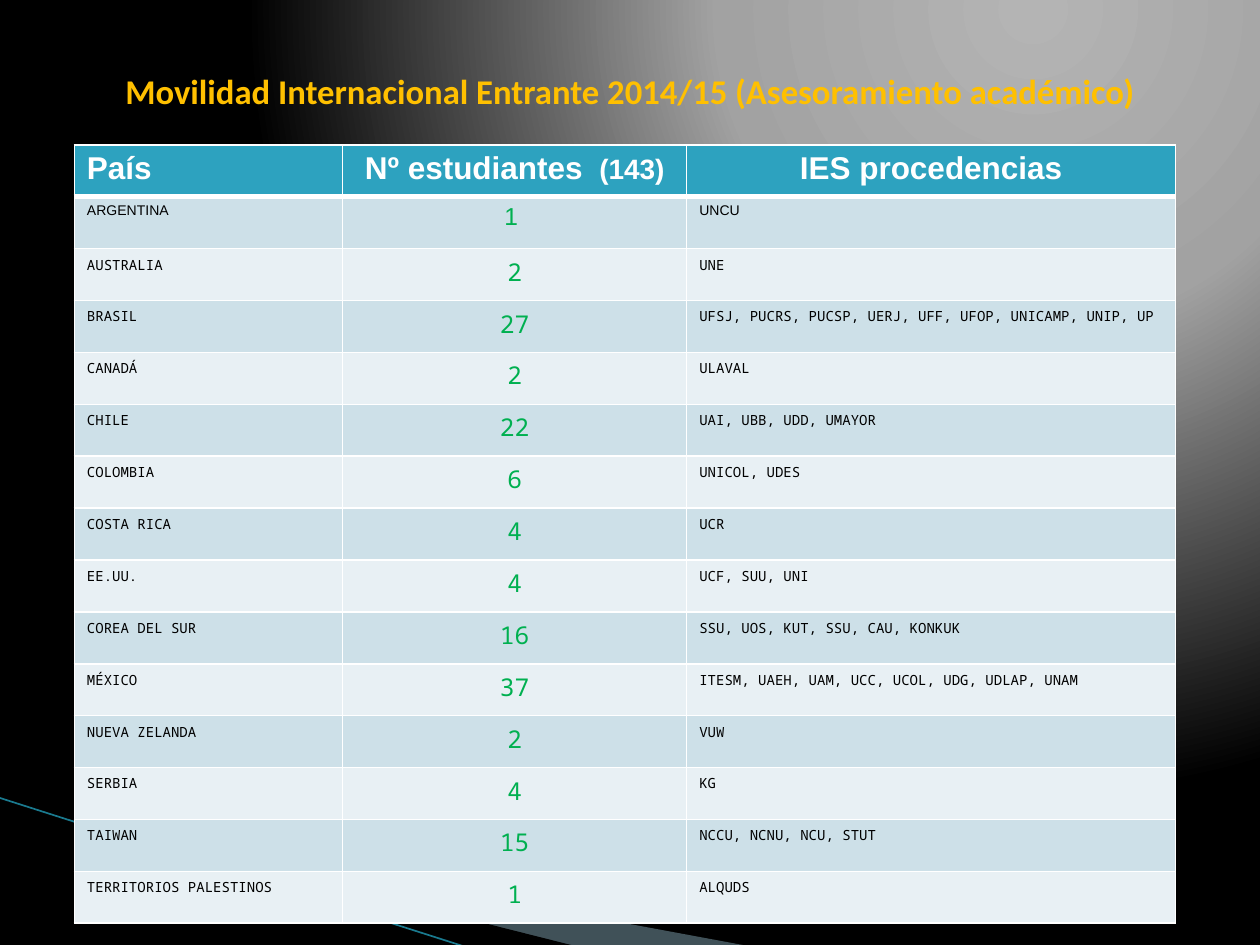
from lxml.etree import SubElement
from pptx import Presentation
from pptx.dml.color import RGBColor
from pptx.enum.shapes import MSO_CONNECTOR
from pptx.enum.text import MSO_ANCHOR, MSO_AUTO_SIZE, PP_ALIGN
from pptx.oxml import parse_xml
from pptx.oxml.ns import nsdecls, qn
from pptx.util import Inches, Pt

WHITE = RGBColor(0xFF, 0xFF, 0xFF)
BLACK = RGBColor(0x00, 0x00, 0x00)
AMBER = RGBColor(0xFF, 0xC0, 0x00)
GREEN = RGBColor(0x00, 0xB0, 0x50)
TEAL = RGBColor(0x2D, 0xA2, 0xBF)
DARK_TEAL = RGBColor(0x1A, 0x7A, 0x8F)
PALE_BLUE = RGBColor(0xA0, 0xCB, 0xDC)
BANDS = (RGBColor(0xCD, 0xE0, 0xE8), RGBColor(0xE8, 0xF0, 0xF4))

MONO = "Noto Sans Mono"
COLUMN_WIDTHS = (2.13, 2.73, 3.88)
COUNTRIES = [
    ("ARGENTINA", "1 ", "UNCU"),
    ("AUSTRALIA", "2", "UNE"),
    ("BRASIL", "27", "UFSJ, PUCRS, PUCSP, UERJ, UFF, UFOP, UNICAMP, UNIP, UP"),
    ("CANADÁ", "2", "ULAVAL"),
    ("CHILE", "22", "UAI, UBB, UDD, UMAYOR"),
    ("COLOMBIA", "6", "UNICOL, UDES"),
    ("COSTA RICA", "4", "UCR"),
    ("EE.UU.", "4", "UCF, SUU, UNI"),
    ("COREA DEL SUR", "16", "SSU, UOS, KUT, SSU, CAU, KONKUK"),
    ("MÉXICO", "37", "ITESM, UAEH, UAM, UCC, UCOL, UDG, UDLAP, UNAM"),
    ("NUEVA ZELANDA", "2", "VUW"),
    ("SERBIA", "4", "KG"),
    ("TAIWAN", "15", "NCCU, NCNU, NCU, STUT"),
    ("TERRITORIOS PALESTINOS", "1", "ALQUDS"),
]


def add_text(p, text, size, color, font="Arial", bold=False, align=PP_ALIGN.LEFT):
    p.alignment = align
    r = p.add_run()
    r.text = text
    r.font.size = Pt(size)
    r.font.name = font
    r.font.bold = bold
    r.font.color.rgb = color


def set_background(slide):
    stops = "".join(
        f'<a:gs pos="{pos * 1000}"><a:srgbClr val="{color}"/></a:gs>'
        for pos, color in ((0, "B4B4B4"), (40, "A2A2A2"), (100, "000000")))
    bg = parse_xml(
        f'<p:bg {nsdecls("p", "a")}><p:bgPr><a:gradFill><a:gsLst>{stops}</a:gsLst>'
        '<a:path path="circle"><a:fillToRect l="65000" t="0" r="0" b="98000"/></a:path>'
        '</a:gradFill><a:effectLst/></p:bgPr></p:bg>')
    slide.element.cSld.insert(0, bg)


def add_wedge(slide, points, color, opacity=100):
    start, *rest = [(Inches(x), Inches(y)) for x, y in points]
    builder = slide.shapes.build_freeform(*start)
    builder.add_line_segments(rest, close=True)
    sp = builder.convert_to_shape()
    sp.shadow.inherit = False
    sp.fill.solid()
    sp.fill.fore_color.rgb = color
    sp.line.fill.background()
    if opacity < 100:
        clr = sp.element.spPr.find(qn("a:solidFill"))[0]
        SubElement(clr, qn("a:alpha"), val=str(opacity * 1000))


def add_line(slide, start, end, color, width):
    line = slide.shapes.add_connector(
        MSO_CONNECTOR.STRAIGHT, *map(Inches, start + end))
    line.line.color.rgb = color
    line.line.width = Pt(width)
    SubElement(line.element.spPr, qn("a:effectLst"))


def format_cell(cell, fill, bottom=1):
    # Borders come before the fill in the cell properties
    tcPr = cell._tc.get_or_add_tcPr()
    for side, width in (("L", 1), ("R", 1), ("T", 1), ("B", bottom)):
        ln = SubElement(tcPr, qn(f"a:ln{side}"), w=str(Pt(width)))
        SubElement(SubElement(ln, qn("a:solidFill")), qn("a:srgbClr"), val=str(WHITE))
    cell.fill.solid()
    cell.fill.fore_color.rgb = fill


def add_country_table(slide):
    count = len(COUNTRIES) + 1
    height = Inches(6.18)
    table = slide.shapes.add_table(
        count, len(COLUMN_WIDTHS), Inches(0.59), Inches(1.15),
        Inches(sum(COLUMN_WIDTHS)), height).table
    for column, width in zip(table.columns, COLUMN_WIDTHS):
        column.width = Inches(width)
    for row in table.rows:
        row.height = height // count

    # Header row
    headers = (
        ([("País", 18)], PP_ALIGN.LEFT),
        ([("Nº estudiantes ", 18), (" (143)", 16)], PP_ALIGN.CENTER),
        ([("IES procedencias", 18)], PP_ALIGN.CENTER),
    )
    for cell, (runs, align) in zip(table.rows[0].cells, headers):
        format_cell(cell, TEAL, bottom=3)
        for text, size in runs:
            add_text(cell.text_frame.paragraphs[0], text, size, WHITE,
                     bold=True, align=align)

    # Country rows
    styles = ((8, BLACK, PP_ALIGN.LEFT), (14, GREEN, PP_ALIGN.CENTER),
              (8, BLACK, PP_ALIGN.LEFT))
    for i, values in enumerate(COUNTRIES):
        font = MONO if i else "Arial"
        cells = table.rows[i + 1].cells
        for cell, text, (size, color, align) in zip(cells, values, styles):
            format_cell(cell, BANDS[i % 2])
            add_text(cell.text_frame.paragraphs[0], text, size, color,
                     font=font, align=align)


def set_title(slide):
    title = slide.shapes.title
    title.left, title.top = Inches(0.5), Inches(0.3)
    title.width, title.height = Inches(9), Inches(1.17)
    tf = title.text_frame
    tf.auto_size = MSO_AUTO_SIZE.NONE
    tf.vertical_anchor = MSO_ANCHOR.MIDDLE
    p = tf.paragraphs[0]
    add_text(p, "Movilidad Internacional Entrante 2014/15 (Asesoramiento académico)",
             19.8, AMBER, font="Calibri", bold=True, align=PP_ALIGN.CENTER)
    # The closing line break keeps the size and font of the text
    p.add_line_break()
    br = p._p.find(qn("a:br"))
    for parent, tag in ((br, "a:rPr"), (p._p, "a:endParaRPr")):
        rPr = SubElement(parent, qn(tag), sz="1980", b="1")
        SubElement(rPr, qn("a:latin"), typeface="Calibri")
    # Bring the title in front of the table
    slide.shapes._spTree.append(title.element)


def main():
    prs = Presentation()
    prs.slide_width, prs.slide_height = Inches(10), Inches(7.5)
    slide = prs.slides.add_slide(prs.slide_layouts[5])
    set_background(slide)

    # Corner decoration
    add_wedge(slide, [(0.55, 6.51), (5.95, 7.51), (4.56, 7.51), (0.55, 6.5)],
              PALE_BLUE, opacity=40)
    add_wedge(slide, [(0.53, 6.49), (4.57, 7.51), (3.72, 7.52), (0.54, 6.5)], BLACK)
    add_line(slide, (-0.01, 6.33), (3.71, 7.52), DARK_TEAL, 0.95)

    add_country_table(slide)
    set_title(slide)
    prs.save("out.pptx")


if __name__ == "__main__":
    main()
